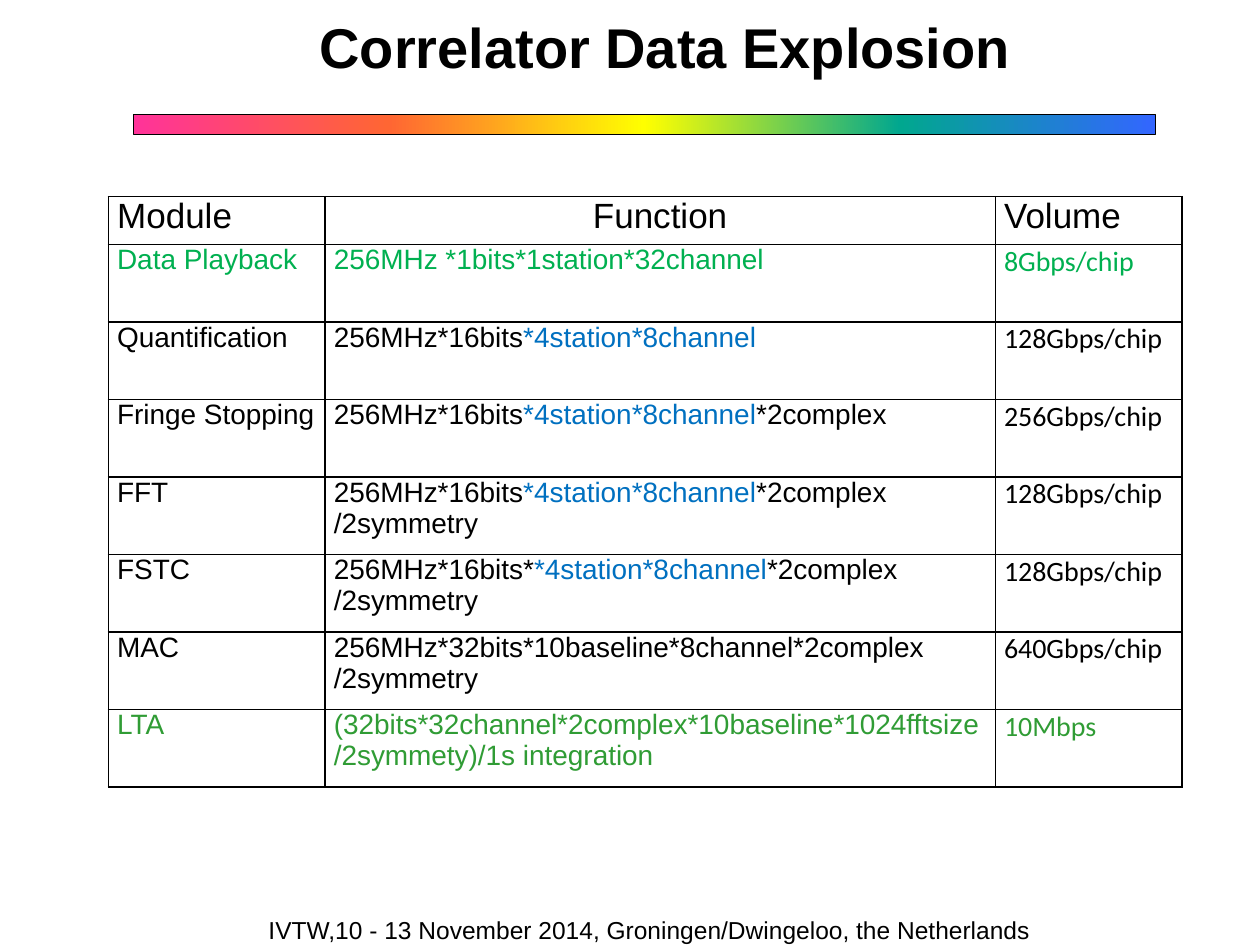
from dataclasses import dataclass

from lxml.etree import SubElement
from pptx import Presentation
from pptx.dml.color import RGBColor
from pptx.enum.shapes import MSO_SHAPE
from pptx.enum.text import MSO_ANCHOR, PP_ALIGN
from pptx.oxml import parse_xml
from pptx.oxml.ns import nsdecls, qn
from pptx.util import Inches, Pt


@dataclass(frozen=True)
class Theme:
    ink: str = "000000"
    playback: str = "00B050"
    stations: str = "0070C0"
    integration: str = "309C35"
    rainbow: tuple = ("FF3399", "FF6633", "FFFF00", "01A78F", "3366FF")
    body_font: str = "Arial"
    volume_font: str = "Calibri"
    title_size: int = 32
    header_size: int = 20
    body_size: int = 16
    footer_size: int = 14
    border_width: float = 1
    outline_width: float = 0.75


@dataclass(frozen=True)
class Span:
    text: str
    color: str


@dataclass(frozen=True)
class Stage:
    module: str
    function: tuple
    volume: str
    color: str


THEME = Theme()
INK = THEME.ink
STATIONS = Span("*4station*8channel", THEME.stations)
COMPLEX = Span("*2complex", INK)
SYMMETRY = (Span("/2symmetry", INK),)


def sampled(bits: str, *rest: Span) -> tuple:
    return (Span(f"256MHz*{bits}", INK), *rest)


STAGES = (
    Stage("Data Playback", ((Span("256MHz *1bits*1station*32channel", THEME.playback),),),
          "8Gbps/chip", THEME.playback),
    Stage("Quantification", (sampled("16bits", STATIONS),), "128Gbps/chip", INK),
    Stage("Fringe Stopping", (sampled("16bits", STATIONS, COMPLEX),), "256Gbps/chip", INK),
    Stage("FFT", (sampled("16bits", STATIONS, COMPLEX), SYMMETRY), "128Gbps/chip", INK),
    Stage("FSTC", (sampled("16bits*", STATIONS, COMPLEX), SYMMETRY), "128Gbps/chip", INK),
    Stage("MAC", (sampled("32bits*10baseline*8channel*2complex"), SYMMETRY),
          "640Gbps/chip", INK),
    Stage("LTA", ((Span("(32bits*32channel*2complex*10baseline*1024fftsize", THEME.integration),),
                  (Span("/2symmety)/1s integration", THEME.integration),)),
          "10Mbps", THEME.integration),
)


def apply(target, values: dict) -> None:
    for name, value in values.items():
        setattr(target, name, value)


def box(left: float, top: float, width: float, height: float) -> dict:
    return {"left": Inches(left), "top": Inches(top),
            "width": Inches(width), "height": Inches(height)}


def write(frame, lines: tuple, size: int, align, font: str = THEME.body_font,
          bold: bool = False) -> None:
    for index, line in enumerate(lines):
        paragraph = frame.add_paragraph() if index else frame.paragraphs[0]
        paragraph.alignment = align
        for span in line:
            run = paragraph.add_run()
            run.text = span.text
            apply(run.font, {"size": Pt(size), "name": font, "bold": bold})
            run.font.color.rgb = RGBColor.from_string(span.color)


def add_title(slide) -> None:
    title = slide.shapes.title
    apply(title, box(1.14, 0, 8.28, 0.84))
    apply(title.text_frame, {"word_wrap": True, "vertical_anchor": MSO_ANCHOR.TOP,
                             "margin_top": Inches(0.1)})
    write(title.text_frame, ((Span("Correlator Data Explosion", INK),),),
          THEME.title_size, PP_ALIGN.CENTER, bold=True)


def add_rainbow(slide) -> None:
    rainbow = slide.shapes.add_shape(MSO_SHAPE.RECTANGLE, **box(1.06, 0.91, 8.11, 0.16))
    rainbow.shadow.inherit = False
    rainbow.fill.gradient()
    rainbow.fill.gradient_angle = 0
    stops = rainbow.element.spPr.find(qn("a:gradFill")).find(qn("a:gsLst"))
    for stop in list(stops):
        stops.remove(stop)
    step = 100000 // (len(THEME.rainbow) - 1)
    for index, color in enumerate(THEME.rainbow):
        stop = SubElement(stops, qn("a:gs"), pos=str(index * step))
        SubElement(stop, qn("a:srgbClr"), val=color)
    rainbow.line.color.rgb = RGBColor.from_string(INK)
    rainbow.line.width = Pt(THEME.outline_width)


def format_cell(cell) -> None:
    apply(cell, {"margin_left": Inches(0.07), "margin_right": Inches(0.07),
                 "margin_top": 0, "margin_bottom": 0,
                 "vertical_anchor": MSO_ANCHOR.TOP})
    cell.fill.background()
    properties = cell._tc.get_or_add_tcPr()
    for index, side in enumerate(("lnL", "lnR", "lnT", "lnB")):
        properties.insert(index, parse_xml(
            f'<a:{side} {nsdecls("a")} w="{Pt(THEME.border_width)}"><a:solidFill>'
            f'<a:srgbClr val="{INK}"/></a:solidFill></a:{side}>'))


def add_stage_table(slide) -> None:
    header_height, total_height = 0.38, 4.69
    table = slide.shapes.add_table(len(STAGES) + 1, 3, **box(0.86, 1.56, 8.52, total_height)).table
    apply(table, {"first_row": False, "horz_banding": False})
    for column, width in zip(table.columns, (1.72, 5.32, 1.48)):
        column.width = Inches(width)
    stage_height = (total_height - header_height) / len(STAGES)
    for index, row in enumerate(table.rows):
        row.height = Inches(stage_height if index else header_height)
    for cell in table.iter_cells():
        format_cell(cell)

    headings = (("Module", PP_ALIGN.JUSTIFY), ("Function", PP_ALIGN.CENTER),
                ("Volume", PP_ALIGN.JUSTIFY))
    for column, (heading, align) in enumerate(headings):
        write(table.cell(0, column).text_frame, ((Span(heading, INK),),),
              THEME.header_size, align)
    for row, stage in enumerate(STAGES, start=1):
        contents = (
            (((Span(stage.module, stage.color),),), THEME.body_font),
            (stage.function, THEME.body_font),
            (((Span(stage.volume, stage.color),),), THEME.volume_font),
        )
        for column, (lines, font) in enumerate(contents):
            write(table.cell(row, column).text_frame, lines,
                  THEME.body_size, PP_ALIGN.JUSTIFY, font)


def add_footer(slide) -> None:
    footer = slide.shapes.add_textbox(**box(1.64, 7.21, 7.03, 0.52))
    footer.text_frame.word_wrap = True
    venue = "IVTW,10 - 13 November 2014, Groningen/Dwingeloo, the Netherlands"
    write(footer.text_frame, ((Span(venue, INK),),), THEME.footer_size, PP_ALIGN.CENTER)


def main() -> None:
    presentation = Presentation()
    apply(presentation, {"slide_width": Inches(10), "slide_height": Inches(7.5)})
    slide = presentation.slides.add_slide(presentation.slide_layouts[5])
    add_rainbow(slide)
    add_title(slide)
    add_stage_table(slide)
    add_footer(slide)
    presentation.save("out.pptx")


if __name__ == "__main__":
    main()
